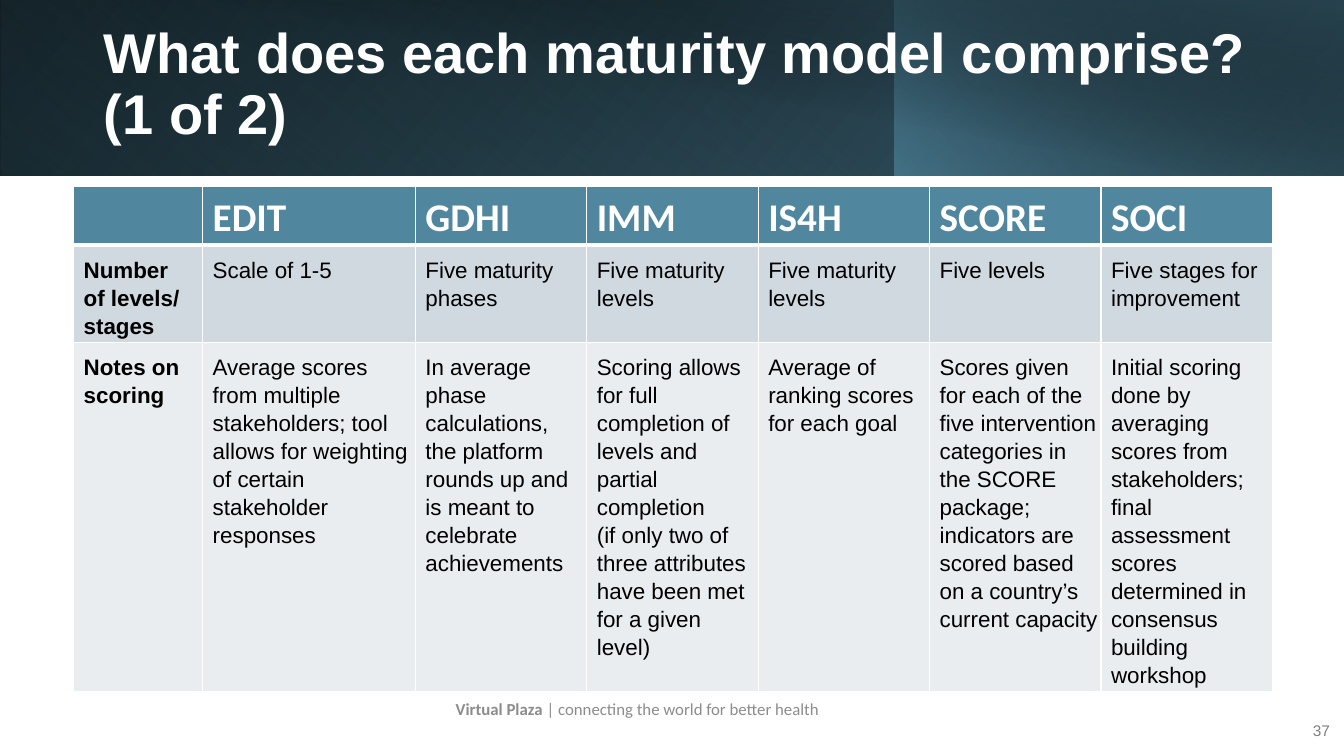
from pptx import Presentation
from pptx.util import Inches, Pt
from pptx.dml.color import RGBColor
from pptx.enum.shapes import MSO_SHAPE
from pptx.enum.text import MSO_ANCHOR, MSO_AUTO_SIZE, PP_ALIGN
from pptx.oxml import parse_xml
from pptx.oxml.ns import nsdecls

HUE = {"white": "FFFFFF", "black": "000000", "teal": "50879F", "slate": "284450",
       "steel": "3C6577", "pale": "D0D9DF", "mist": "E9EDF0",
       "gray": "808080", "ash": "8C8C8C"}
WIDE, HIGH = 13.33, 7.5


def style(run, size, face, hue, bold=False):
    font = run.font
    font.size, font.name, font.bold = Pt(size), face, bold
    font.color.rgb = RGBColor.from_string(HUE[hue])


def label(left, top, width, height, parts, size, face, hue, align):
    box = slide.shapes.add_textbox(Inches(left), Inches(top), Inches(width), Inches(height))
    frame = box.text_frame
    frame.word_wrap = True
    frame.vertical_anchor = MSO_ANCHOR.MIDDLE
    para = frame.paragraphs[0]
    para.alignment = align
    for text, bold in parts:
        run = para.add_run()
        run.text = text
        style(run, size, face, hue, bold)


deck = Presentation()
deck.slide_width, deck.slide_height = Inches(WIDE), Inches(HIGH)
slide = deck.slides.add_slide(deck.slide_layouts[5])

# Banner layers: left, width, turn, flip, angle, stops (place, colour, opacity)
layers = [
    (0, WIDE, 0, 1, 140, [(0, "black", 100), (100, "steel", 100)]),
    (0, 8.88, 180, 1, 230, [(20, "teal", 0), (100, "slate", 55)]),
    (8.87, 4.46, 0, 1, 220, [(0, "teal", 66), (100, "black", 30)]),
    (0.5, 12.83, 0, 0, 280, [(50, "black", 0), (99, "slate", 52)]),
]
for left, width, turn, flip, angle, stops in layers:
    band = slide.shapes.add_shape(MSO_SHAPE.RECTANGLE, Inches(left), 0,
                                  Inches(width), Inches(1.74))
    band.shadow.inherit = False
    band.line.fill.background()
    band.rotation = turn
    props = band._element.spPr
    if flip:
        props.xfrm.set("flipH", "1")
    marks = "".join(
        f'<a:gs pos="{place * 1000}"><a:srgbClr val="{HUE[hue]}">'
        f'<a:alpha val="{alpha * 1000}"/></a:srgbClr></a:gs>'
        for place, hue, alpha in stops)
    props.insert(2, parse_xml(
        f'<a:gradFill {nsdecls("a")} rotWithShape="1"><a:gsLst>{marks}</a:gsLst>'
        f'<a:lin ang="{angle * 60000}" scaled="0"/></a:gradFill>'))

# Title, brought in front of the banner
title = slide.shapes.title
title.left, title.top = Inches(0.93), Inches(0.25)
title.width, title.height = Inches(11.87), Inches(1.2)
frame = title.text_frame
frame.text = "What does each maturity model comprise? (1 of 2)"
frame.auto_size = MSO_AUTO_SIZE.NONE
frame.word_wrap = True
frame.vertical_anchor = MSO_ANCHOR.MIDDLE
para = frame.paragraphs[0]
para.alignment, para.line_spacing = PP_ALIGN.LEFT, 0.9
style(para.runs[0], 40, "Arial", "white", True)
slide.shapes._spTree.append(title._element)

# Page number
label(12.8, 7.04, 0.49, 0.42, [("37", False)], 11, "Arial", "gray", PP_ALIGN.RIGHT)

# Table of models
rows = [
    ["", "EDIT", "GDHI", "IMM", "IS4H", "SCORE", "SOCI"],
    ["Number of levels/ stages", "Scale of 1-5", "Five maturity phases",
     "Five maturity levels", "Five maturity levels", "Five levels",
     "Five stages for improvement"],
    ["Notes on scoring",
     "Average scores from multiple stakeholders; tool allows for weighting of certain "
     "stakeholder responses",
     "In average phase calculations, the platform rounds up and is meant to celebrate "
     "achievements",
     "Scoring allows for full completion of levels and partial completion\v"
     "(if only two of three attributes have been met for a given level)",
     "Average of ranking scores for each goal",
     "Scores given for each of the five intervention categories in the SCORE package; "
     "indicators are scored based on a country’s current capacity",
     "Initial scoring done by averaging scores from stakeholders; final assessment "
     "scores determined in consensus building workshop"],
]
widths = [1.28, 2.11] + [1.7] * 5
heights = [0.58, 0.95, 3.45]
fills = ["teal", "pale", "mist"]
table = slide.shapes.add_table(len(rows), len(widths), Inches(0.73), Inches(1.85),
                               Inches(sum(widths)), Inches(sum(heights))).table
for col, width in zip(table.columns, widths):
    col.width = Inches(width)
for r, texts in enumerate(rows):
    table.rows[r].height = Inches(heights[r])
    for c, text in enumerate(texts):
        cell = table.cell(r, c)
        cell.fill.solid()
        cell.fill.fore_color.rgb = RGBColor.from_string(HUE[fills[r]])
        cell.margin_left = Inches(0.1)
        cell.margin_right = Inches(0.1 if r and c == 0 else 0.03)
        cell.margin_top = Inches(0.1 if r else 0.03)
        cell.margin_bottom = Inches(0.03)
        cell.vertical_anchor = MSO_ANCHOR.TOP if r else MSO_ANCHOR.BOTTOM
        cell.text_frame.text = text
        para = cell.text_frame.paragraphs[0]
        if r:
            para.line_spacing = Pt(20)
        for run in para.runs:
            if r:
                style(run, 16, "Arial", "black", c == 0)
            else:
                style(run, 28, "Calibri", "white", True)
        # White rules, heavier under the header
        for i, side in enumerate("LRTB"):
            heavy = (r, side) in [(0, "B"), (1, "T")]
            cell._tc.get_or_add_tcPr().insert(i, parse_xml(
                f'<a:ln{side} {nsdecls("a")} w="{Pt(3 if heavy else 1)}"><a:solidFill>'
                f'<a:srgbClr val="{HUE["white"]}"/></a:solidFill></a:ln{side}>'))

# Footer
label(4.42, 6.82, 4.55, 0.42,
      [("Virtual Plaza ", True), ("| connecting the world for better health", False)],
      12, "Calibri", "ash", PP_ALIGN.LEFT)

deck.save("out.pptx")
